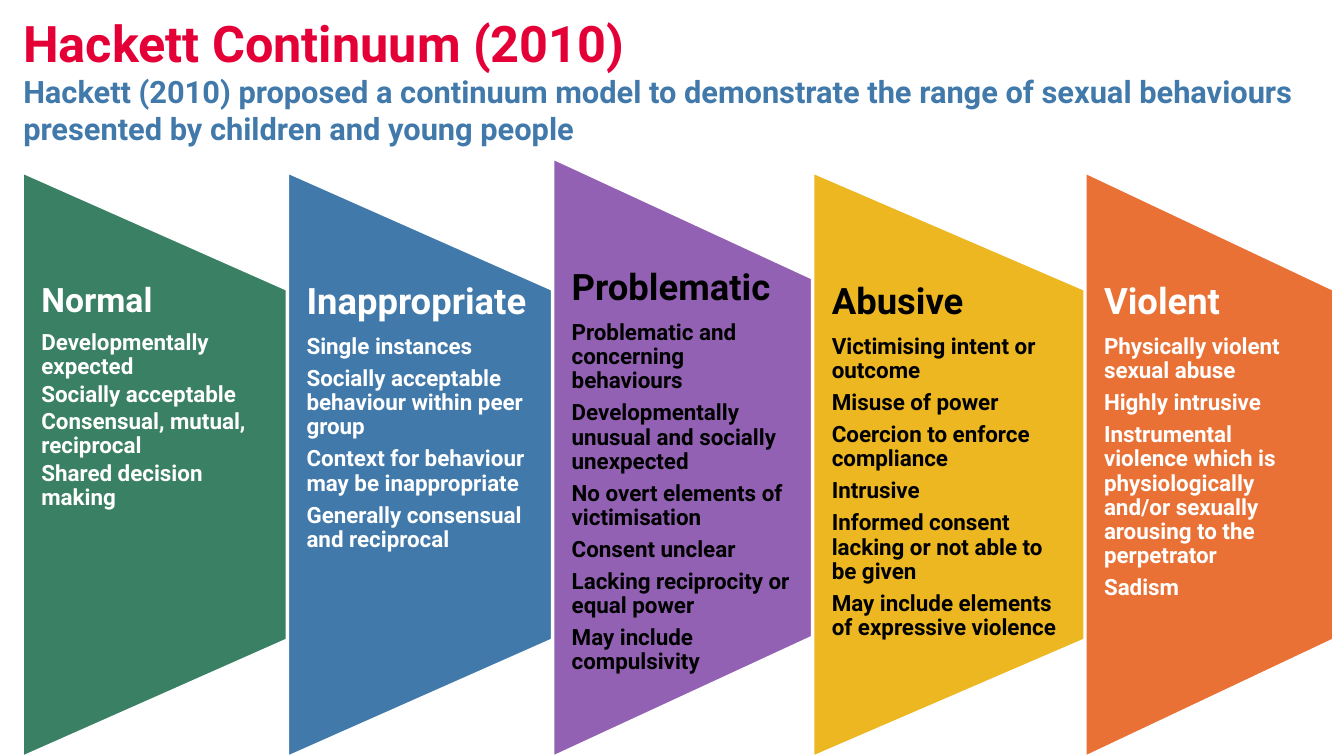
import itertools

import pptx
import pptx.dml.color
import pptx.enum.text
import pptx.util

WHITE, BLACK = "FFFFFF", "000000"
GAP = 0.15  # per cent of the slide's width
EDGES = [1.73, 21.46, 41.19, 60.54, 80.8, 99.32]
TOP, PEAK = 22.93, 21.07

# fill, ink, top, heading size, spacing share of body, heading, points
STAGES = [
    ("3A8064", WHITE, TOP, 24, 0.15, "Normal", [
        "Developmentally expected",
        "Socially acceptable",
        "Consensual, mutual, reciprocal",
        "Shared decision making"]),
    ("4179AA", WHITE, TOP, 26, 0.35, "Inappropriate", [
        "Single instances",
        "Socially acceptable behaviour within peer group",
        "Context for behaviour may be inappropriate",
        "Generally consensual and reciprocal"]),
    ("9361B3", BLACK, PEAK, 26, 0.35, "Problematic", [
        "Problematic and concerning behaviours",
        "Developmentally unusual and socially unexpected",
        "No overt elements of victimisation",
        "Consent unclear",
        "Lacking reciprocity or equal power",
        "May include compulsivity"]),
    ("ECB720", BLACK, TOP, 26, 0.35, "Abusive", [
        "Victimising intent or outcome",
        "Misuse of power",
        "Coercion to enforce compliance",
        "Intrusive",
        "Informed consent lacking or not able to be given",
        "May include elements of expressive violence"]),
    ("E97135", WHITE, TOP, 26, 0.35, "Violent", [
        "Physically violent sexual abuse",
        "Highly intrusive",
        "Instrumental violence which is physiologically and/or sexually "
        "arousing to the perpetrator",
        "Sadism"]),
]


def color(code):
    return pptx.dml.color.RGBColor.from_string(code)


class Board:
    """Draws on one slide; lengths are per cent of its width or height."""

    face = "Roboto"
    body = 16

    def __init__(self, deck):
        self.deck = deck
        self.slide = deck.slides.add_slide(deck.slide_layouts[6])

    def across(self, share):
        return round(self.deck.slide_width * share / 100)

    def down(self, share):
        return round(self.deck.slide_height * share / 100)

    def ink(self, font, size, code):
        font.name, font.size, font.bold = self.face, pptx.util.Pt(size), True
        font.color.rgb = color(code)

    def frame(self, shape, side, rise):
        """Set wrapping, top anchor and insets in inches."""
        text = shape.text_frame
        text.word_wrap = True
        text.vertical_anchor = pptx.enum.text.MSO_ANCHOR.TOP
        text.margin_left = text.margin_right = pptx.util.Inches(side)
        text.margin_top = text.margin_bottom = pptx.util.Inches(rise)
        return text

    def title(self, left, top, width, height, lines):
        box = self.slide.shapes.add_textbox(
            self.across(left), self.down(top),
            self.across(width), self.down(height))
        para = self.frame(box, 0, 0).paragraphs[0]
        para.text = "\v".join(words for words, _, _ in lines)
        for run, (_, size, code) in zip(para.runs, lines):
            self.ink(run.font, size, code)

    def panel(self, left, right, top, fill):
        """Draw a panel whose right side is cut by a fifth at each end."""
        cut = (100 - top) / 5
        points = [(left, top), (right, top + cut), (right, 100 - cut)]
        pen = self.slide.shapes.build_freeform(
            self.across(left), self.down(100))
        pen.add_line_segments(
            [(self.across(x), self.down(y)) for x, y in points])
        shape = pen.convert_to_shape()
        shape.shadow.inherit = False
        shape.fill.solid()
        shape.fill.fore_color.rgb = color(fill)
        shape.line.color.rgb = color(WHITE)
        shape.line.width = pptx.util.Pt(1)
        return shape

    def stage(self, left, right, fill, ink, top, size, share, head, points):
        text = self.frame(self.panel(left, right, top, fill), 0.18, 1.09)
        text.text = "\n".join([head] + points)
        for spot, para in enumerate(text.paragraphs):
            high, part = (self.body, share) if spot else (size, 0.35)
            para.alignment = pptx.enum.text.PP_ALIGN.LEFT
            para.line_spacing = 0.9
            para.space_after = pptx.util.Pt(high * part)
            for run in para.runs:
                self.ink(run.font, high, ink)


def main():
    deck = pptx.Presentation()
    deck.slide_width = pptx.util.Inches(13.33)
    deck.slide_height = pptx.util.Inches(7.5)
    board = Board(deck)
    board.title(1.73, 1.6, 95.27, 18.4, [
        ("Hackett Continuum (2010)", 36, "E40037"),
        ("Hackett (2010) proposed a continuum model to demonstrate the range "
         "of sexual behaviours presented by children and young people",
         22, "4179AA")])
    for (left, end), stage in zip(itertools.pairwise(EDGES), STAGES):
        board.stage(left, end - GAP, *stage)
    deck.save("out.pptx")


if __name__ == "__main__":
    main()
